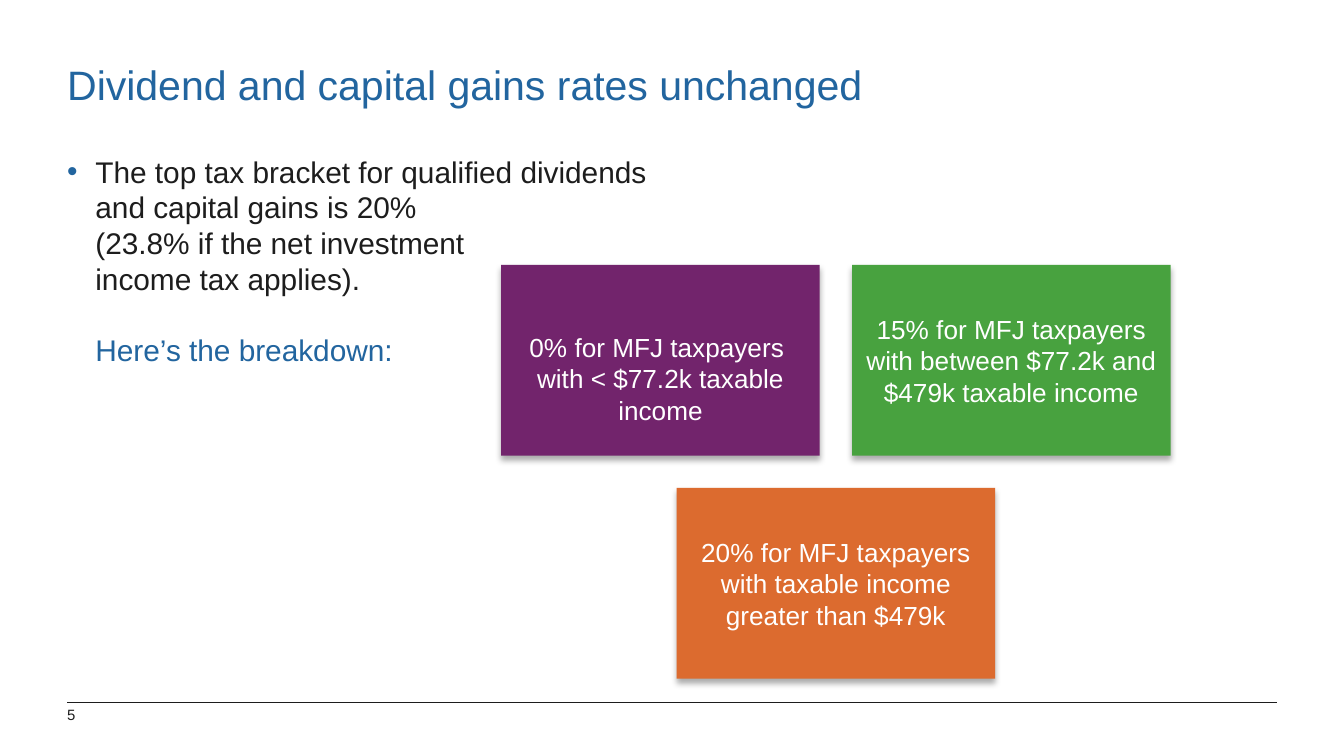
import pptx
import pptx.util
import pptx.dml.color
import pptx.enum.shapes
import pptx.enum.text
import pptx.oxml
import pptx.oxml.ns
from lxml import etree

Inches, Pt = pptx.util.Inches, pptx.util.Pt
ALIGN, ANCHOR = pptx.enum.text.PP_ALIGN, pptx.enum.text.MSO_ANCHOR
SHAPE, CONNECTOR = pptx.enum.shapes.MSO_SHAPE, pptx.enum.shapes.MSO_CONNECTOR
qn = pptx.oxml.ns.qn

COLORS = {"ink": "1D1D1D", "blue": "22659F", "white": "FFFFFF",
          "purple": "72246C", "green": "48A23F", "orange": "DC6B2F"}
FONT = "Arial"
CARD_W, CARD_H, GAP = 2.37, 1.42, 0.24

# colour, lines of text, inset, extra space above the text
CARDS = [
    ("purple", ["0% for MFJ taxpayers ", "with < $77.2k taxable income"], 0.07, 0.27),
    ("green", ["15% for MFJ taxpayers with between $77.2k and $479k taxable income"], 0.06, 0),
    ("orange", ["20% for MFJ taxpayers with taxable income greater than $479k"], 0.06, 0),
]


def rgb(name):
    return pptx.dml.color.RGBColor.from_string(COLORS[name])


def place(sp, x, y, w, h):
    sp.left, sp.top, sp.width, sp.height = (Inches(v) for v in (x, y, w, h))


def set_frame(tf, inset=0, anchor=ANCHOR.TOP):
    tf.word_wrap = True
    tf.auto_size = pptx.enum.text.MSO_AUTO_SIZE.NONE
    tf.vertical_anchor = anchor
    tf.margin_left = tf.margin_top = tf.margin_right = tf.margin_bottom = Inches(inset)


def add_lines(p, lines, size, color, align=ALIGN.LEFT):
    """Fill a paragraph with one run per line, parted by line breaks."""
    p.alignment = align
    p.space_before = Pt(0)
    for i, line in enumerate(lines):
        if i:
            p.add_line_break()
        r = p.add_run()
        r.text = line
        r.font.name, r.font.size = FONT, Pt(size)
        r.font.color.rgb = rgb(color)


def set_bullet(p, char=None):
    """Give a hanging bullet, or the same indent without one."""
    pPr = p._p.get_or_add_pPr()
    pPr.set("marL", str(Inches(0.21)))
    pPr.set("indent", str(Inches(-0.21 if char else 0)))
    if char:
        clr = etree.SubElement(pPr, qn("a:buClr"))
        etree.SubElement(clr, qn("a:srgbClr"), val=COLORS["blue"])
        etree.SubElement(pPr, qn("a:buFont"), typeface=FONT)
        etree.SubElement(pPr, qn("a:buChar"), char=char)
    else:
        etree.SubElement(pPr, qn("a:buNone"))


def add_shadow(sp):
    sp._element.spPr.append(pptx.oxml.parse_xml(
        f'<a:effectLst {pptx.oxml.ns.nsdecls("a")}>'
        f'<a:outerShdw blurRad="{Pt(3.5)}" dist="{Pt(2.2)}" dir="5400000" rotWithShape="0">'
        '<a:srgbClr val="000000"><a:alpha val="32000"/></a:srgbClr>'
        '</a:outerShdw></a:effectLst>'))


def fill_title(sp, x, y, w, h):
    place(sp, x, y, w, h)
    set_frame(sp.text_frame)
    add_lines(sp.text_frame.paragraphs[0],
              ["Dividend and capital gains rates unchanged"], 22, "blue")


def fill_body(sp, x, y, w, h):
    place(sp, x, y, w, h)
    tf = sp.text_frame
    set_frame(tf)
    p = tf.paragraphs[0]
    set_bullet(p, "•")
    add_lines(p, ["The top tax bracket for qualified dividends", "and capital gains is 20%",
                  "(23.8% if the net investment", "income tax applies)."], 16, "ink")
    p = tf.add_paragraph()
    set_bullet(p)
    add_lines(p, ["Here’s the breakdown:"], 16, "blue")
    p.space_before = Pt(19)


def add_card(s, x, y, color, lines, inset, extra):
    sp = s.shapes.add_shape(SHAPE.RECTANGLE, Inches(x), Inches(y), Inches(CARD_W), Inches(CARD_H))
    sp.fill.solid()
    sp.fill.fore_color.rgb = rgb(color)
    sp.line.fill.background()
    add_shadow(sp)
    tf = sp.text_frame
    set_frame(tf, inset, ANCHOR.MIDDLE)
    tf.margin_top = Inches(inset + extra)
    add_lines(tf.paragraphs[0], lines, 14, "white", ALIGN.CENTER)


def add_cards(s, x, y):
    """Two cards side by side, with the third centred below them."""
    step = CARD_W + GAP
    spots = [(0, 0), (step, 0), (step / 2, CARD_H + GAP)]
    for (dx, dy), card in zip(spots, CARDS):
        add_card(s, x + dx, y + dy, *card)


def add_footer(s, x, y, w):
    rule = s.shapes.add_connector(CONNECTOR.STRAIGHT, Inches(x), Inches(y), Inches(x + w), Inches(y))
    rule.line.color.rgb = rgb("ink")
    rule.line.width = Pt(0.5)
    etree.SubElement(rule._element.spPr, qn("a:effectLst"))
    sp = s.shapes.add_textbox(Inches(x), Inches(y + 0.02), Inches(0.36), Inches(0.22))
    set_frame(sp.text_frame)
    add_lines(sp.text_frame.paragraphs[0], ["5"], 8, "ink")


def main():
    prs = pptx.Presentation()
    prs.slide_width = Inches(10)
    prs.slide_height = prs.slide_width * 9 // 16
    s = prs.slides.add_slide(prs.slide_layouts[1])
    add_footer(s, 0.5, 5.23, 9)
    fill_title(s.shapes.title, 0.5, 0.44, 8.5, 0.47)
    fill_body(s.placeholders[1], 0.5, 1.14, 8.5, 3.66)
    add_cards(s, 3.73, 1.97)
    prs.save("out.pptx")


if __name__ == "__main__":
    main()
